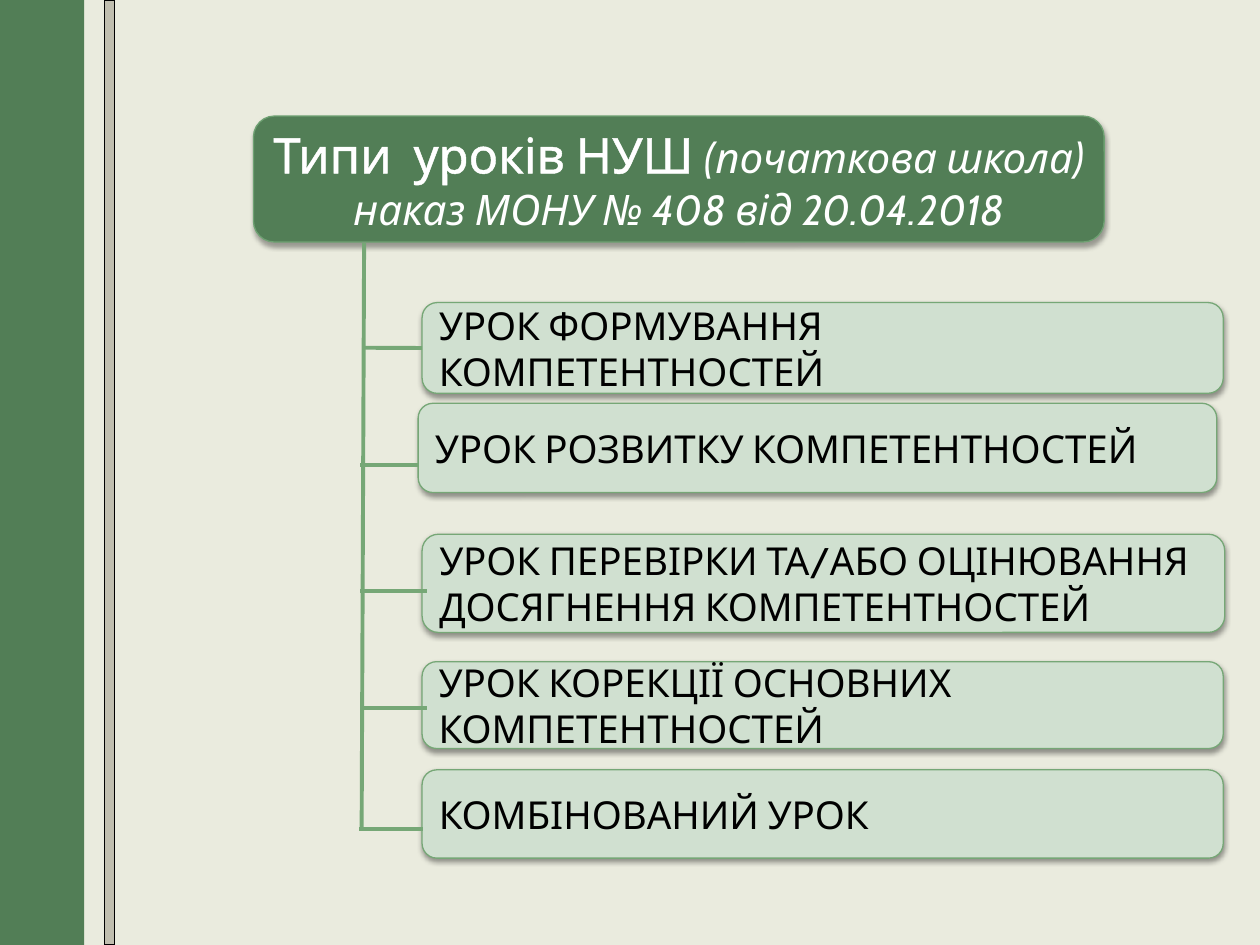
from dataclasses import dataclass

from lxml import etree
from pptx import Presentation
from pptx.dml.color import RGBColor
from pptx.enum.shapes import MSO_CONNECTOR, MSO_SHAPE
from pptx.enum.text import MSO_ANCHOR, PP_ALIGN
from pptx.oxml.ns import qn
from pptx.util import Cm, Pt

RECT = MSO_SHAPE.RECTANGLE
ROUNDED = MSO_SHAPE.ROUNDED_RECTANGLE
STRAIGHT = MSO_CONNECTOR.STRAIGHT
MIDDLE = MSO_ANCHOR.MIDDLE
LEFT, CENTER = PP_ALIGN.LEFT, PP_ALIGN.CENTER
LEFT_SIDE = 1


@dataclass(frozen=True)
class Theme:
    font: str = "Cabin"
    background: str = "EAEBDE"
    green: str = "527E56"
    stripe: str = "C0BEAF"
    title_line: str = "6EA172"
    item_fill: str = "D0E0D0"
    item_line: str = "76A776"
    black: str = "000000"
    white: str = "FFFFFF"
    title_size: float = 28
    subtitle_size: float = 24
    item_size: float = 22
    thin: float = 0.75
    branch: float = 2.25
    title_outline: float = 1.45


@dataclass(frozen=True)
class Lesson:
    text: str
    left: float
    top: float
    width: float
    height: float
    branch_start: float
    branch_end: float
    branch_y: float


THEME = Theme()
LESSONS = [
    Lesson("УРОК ФОРМУВАННЯ КОМПЕТЕНТНОСТЕЙ",
           8.51, 6.1, 16.15, 1.83, 7.34, 8.51, 7.01),
    Lesson("УРОК РОЗВИТКУ КОМПЕТЕНТНОСТЕЙ",
           8.43, 8.13, 16.1, 1.8, 7.26, 8.43, 9.37),
    Lesson("УРОК ПЕРЕВІРКИ ТА/АБО ОЦІНЮВАННЯ ДОСЯГНЕННЯ КОМПЕТЕНТНОСТЕЙ",
           8.51, 10.77, 16.18, 1.98, 7.26, 8.61, 11.91),
    Lesson("УРОК КОРЕКЦІЇ ОСНОВНИХ КОМПЕТЕНТНОСТЕЙ",
           8.51, 13.34, 16.15, 1.75, 7.26, 8.61, 14.27),
    Lesson("КОМБІНОВАНИЙ УРОК",
           8.51, 15.52, 16.15, 1.78, 7.24, 8.53, 16.71),
]


def rgb(color):
    return RGBColor.from_string(color)


def add_color(parent, color):
    fill = etree.SubElement(parent, qn("a:solidFill"))
    etree.SubElement(fill, qn("a:srgbClr"), val=color)


def add_box(slide, kind, box, fill, line=None):
    sp = slide.shapes.add_shape(kind, *map(Cm, box))
    sp.shadow.inherit = False
    sp.fill.solid()
    sp.fill.fore_color.rgb = rgb(fill)
    if line:
        sp.line.color.rgb = rgb(line)
        sp.line.width = Pt(THEME.thin)
    else:
        sp.line.fill.background()
    return sp


def add_shadow(sp, distance, opacity):
    effects = sp._element.spPr.find(qn("a:effectLst"))
    shadow = etree.SubElement(
        effects, qn("a:outerShdw"), blurRad=str(Pt(3.1)),
        dist=str(Pt(distance)), dir="5400000", rotWithShape="0")
    color = etree.SubElement(shadow, qn("a:srgbClr"), val=THEME.black)
    etree.SubElement(color, qn("a:alpha"), val=str(opacity * 1000))


def style_paragraph(p, size, color, align):
    p.alignment = align
    p.font.name = THEME.font
    p.font.size = Pt(size)
    p.font.color.rgb = rgb(color)


def add_run(p, text, size=None, italic=None):
    r = p.add_run()
    r.text = text
    if size:
        r.font.size = Pt(size)
    r.font.italic = italic
    return r


def outline_text(r, color, width):
    ln = etree.Element(qn("a:ln"), w=str(Pt(width)))
    add_color(ln, color)
    r.font._element.insert(0, ln)


def add_title(slide):
    sp = add_box(slide, ROUNDED, (5.11, 2.34, 17.15, 2.54),
                 THEME.green, THEME.title_line)
    add_shadow(sp, 1.8, 35)
    tf = sp.text_frame
    tf.word_wrap = True
    tf.vertical_anchor = MIDDLE
    first, second = tf.paragraphs[0], tf.add_paragraph()
    for p in (first, second):
        style_paragraph(p, THEME.subtitle_size, THEME.white, CENTER)
    r = add_run(first, "Типи  уроків НУШ ", THEME.title_size)
    outline_text(r, THEME.white, THEME.title_outline)
    add_run(first, "(початкова школа)", italic=True)
    add_run(second, "наказ МОНУ № 408 від 20.04.2018", italic=True)


def add_lesson(slide, lesson):
    box = (lesson.left, lesson.top, lesson.width, lesson.height)
    sp = add_box(slide, ROUNDED, box, THEME.item_fill, THEME.item_line)
    add_shadow(sp, 1.6, 38)
    tf = sp.text_frame
    tf.word_wrap = True
    tf.vertical_anchor = MIDDLE
    p = tf.paragraphs[0]
    p.text = lesson.text
    style_paragraph(p, THEME.item_size, THEME.black, LEFT)
    return sp


def add_line(slide, x1, y1, x2, y2):
    line = slide.shapes.add_connector(STRAIGHT, *map(Cm, (x1, y1, x2, y2)))
    line.line.color.rgb = rgb(THEME.item_line)
    line.line.width = Pt(THEME.branch)
    etree.SubElement(line._element.spPr, qn("a:effectLst"))
    return line


def main():
    prs = Presentation()
    prs.slide_width, prs.slide_height = Cm(25.4), Cm(19.05)
    s = prs.slides.add_slide(prs.slide_layouts[6])
    s.background.fill.solid()
    s.background.fill.fore_color.rgb = rgb(THEME.background)

    add_box(s, RECT, (2.11, 0, 0.2, 19.05), THEME.stripe, THEME.black)
    add_box(s, RECT, (0, 0, 1.7, 19.05), THEME.green)
    add_title(s)
    boxes = [add_lesson(s, lesson) for lesson in LESSONS]

    add_line(s, 7.34, 4.9, 7.29, LESSONS[-1].branch_y)
    branches = [
        add_line(s, lesson.branch_start, lesson.branch_y,
                 lesson.branch_end, lesson.branch_y)
        for lesson in LESSONS
    ]
    branches[0].end_connect(boxes[0], LEFT_SIDE)

    prs.save("out.pptx")


if __name__ == "__main__":
    main()
